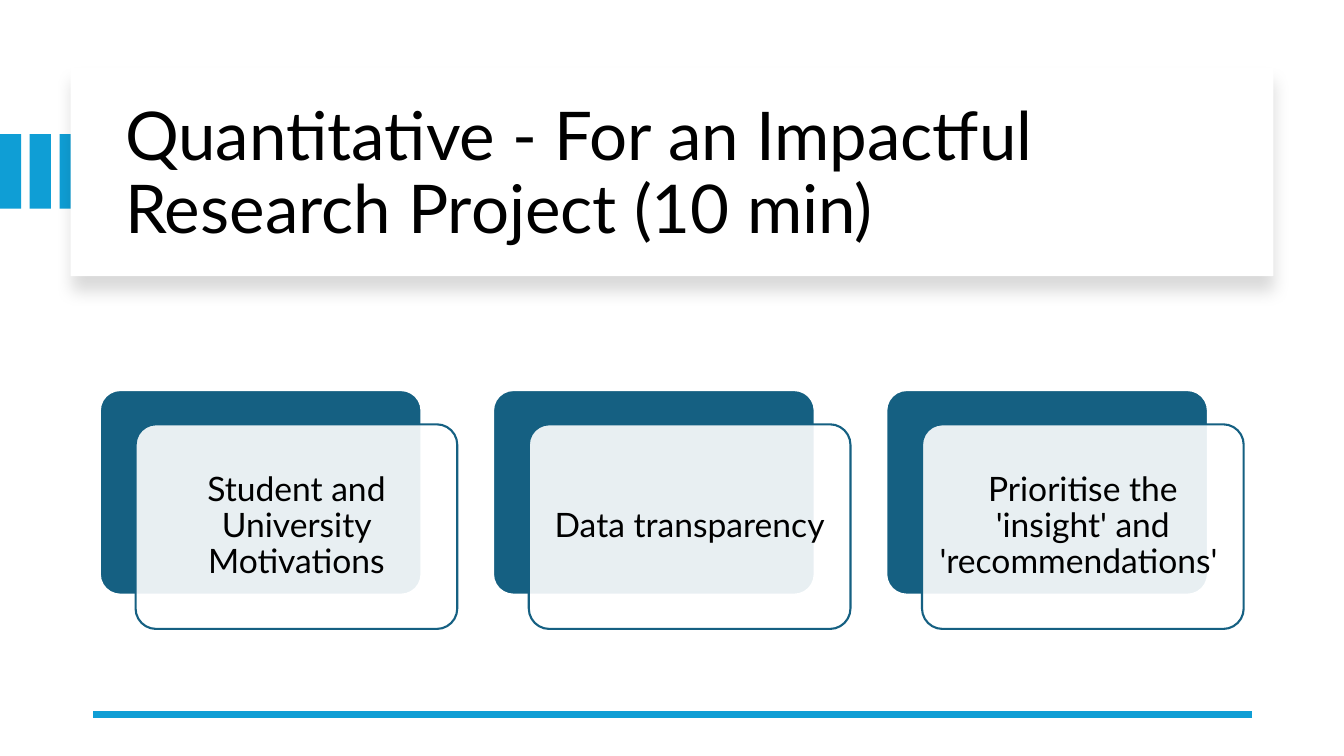
from dataclasses import dataclass

from lxml import etree
from pptx import Presentation
from pptx.dml.color import RGBColor
from pptx.enum.shapes import MSO_CONNECTOR, MSO_SHAPE
from pptx.enum.text import MSO_ANCHOR, MSO_AUTO_SIZE, PP_ALIGN
from pptx.oxml import parse_xml
from pptx.oxml.ns import nsdecls, qn
from pptx.util import Inches, Pt

RECT = MSO_SHAPE.RECTANGLE
ROUNDED = MSO_SHAPE.ROUNDED_RECTANGLE
STRAIGHT = MSO_CONNECTOR.STRAIGHT
MIDDLE = MSO_ANCHOR.MIDDLE
NO_FIT = MSO_AUTO_SIZE.NONE
LEFT, CENTER = PP_ALIGN.LEFT, PP_ALIGN.CENTER

FONT = "Lato"
COLORS = {"accent": "0F9ED5", "card": "156082", "white": "FFFFFF", "text": "000000"}
TITLE = "Quantitative - For an Impactful Research Project (10 min)"
CARD_W, CARD_H, CARD_TOP = 3.19, 2.03, 3.87
CARD_LEFT, CARD_PITCH = 0.99, 3.9
STRIPE_PITCH = 0.295


@dataclass
class Box:
    """Position, size and colours of a shape, in inches."""
    left: float
    top: float
    width: float
    height: float
    fill: str
    line: str = ""
    kind: MSO_SHAPE = RECT


def rgb(name: str) -> RGBColor:
    """Return a palette colour."""
    return RGBColor.from_string(COLORS[name])


def add_box(slide, box: Box):
    """Draw a filled shape, outlined when the box names a line colour."""
    sp = slide.shapes.add_shape(box.kind, Inches(box.left), Inches(box.top),
                                Inches(box.width), Inches(box.height))
    sp.shadow.inherit = False
    sp.fill.solid()
    sp.fill.fore_color.rgb = rgb(box.fill)
    if box.line:
        sp.line.color.rgb = rgb(box.line)
        sp.line.width = Pt(1.5)
    else:
        sp.line.fill.background()
    if box.kind == ROUNDED:
        sp.adjustments[0] = 0.1
    return sp


def set_text(sp, text: str, size: int, align: PP_ALIGN) -> None:
    """Write one middle-anchored paragraph into a shape."""
    tf = sp.text_frame
    tf.word_wrap = True
    tf.auto_size = NO_FIT
    tf.vertical_anchor = MIDDLE
    tf.text = text
    p = tf.paragraphs[0]
    p.alignment = align
    p.line_spacing = 0.9
    font = p.runs[0].font
    font.name, font.size, font.color.rgb = FONT, Pt(size), rgb("text")


def add_title(slide) -> None:
    """Draw the shadowed title panel and place the title over it."""
    panel = add_box(slide, Box(0.7, 0.67, 11.93, 2.07, "white"))
    effects = panel._element.spPr.find(qn("a:effectLst"))
    effects.append(parse_xml(
        f'<a:outerShdw {nsdecls("a")} blurRad="{Pt(11)}" dist="{Pt(10)}" dir="5400000" '
        'algn="t" rotWithShape="0"><a:srgbClr val="000000"><a:alpha val="15000"/>'
        '</a:srgbClr></a:outerShdw>'))
    title = slide.shapes.title
    title.left, title.top = Inches(1.14), Inches(0.89)
    title.width, title.height = Inches(11.13), Inches(1.7)
    set_text(title, TITLE, 48, LEFT)
    panel._element.addnext(title._element)


def add_rule(slide) -> None:
    """Draw the line along the foot of the slide."""
    line = slide.shapes.add_connector(STRAIGHT, Inches(12.42), Inches(7.09),
                                      Inches(0.92), Inches(7.09))
    line.line.color.rgb = rgb("accent")
    line.line.width = Pt(4.5)
    etree.SubElement(line._element.spPr, qn("a:effectLst"))


def add_card(slide, left: float, text: str) -> None:
    """Draw a solid card with a translucent text card offset over it."""
    add_box(slide, Box(left, CARD_TOP, CARD_W, CARD_H, "card", "white", ROUNDED))
    front = add_box(slide, Box(left + 0.355, CARD_TOP + 0.34, CARD_W, CARD_H,
                               "white", "card", ROUNDED))
    color = front._element.spPr.find(qn("a:solidFill"))[0]
    etree.SubElement(color, qn("a:alpha"), val="90000")
    tf = front.text_frame
    tf.margin_left = tf.margin_right = tf.margin_top = tf.margin_bottom = Inches(0.1)
    set_text(front, text, 24, CENTER)


def main() -> None:
    """Build and save the slide."""
    prs = Presentation()
    prs.slide_width, prs.slide_height = Inches(13.33), Inches(7.5)
    slide = prs.slides.add_slide(prs.slide_layouts[5])
    for i in range(3):
        add_box(slide, Box(i * STRIPE_PITCH, 1.33, 0.21, 0.74, "accent"))
    add_title(slide)
    add_rule(slide)
    cards = ("Student and University Motivations", "Data transparency",
             "Prioritise the 'insight' and 'recommendations' ")
    for i, text in enumerate(cards):
        add_card(slide, CARD_LEFT + i * CARD_PITCH, text)
    prs.save("out.pptx")


if __name__ == "__main__":
    main()
